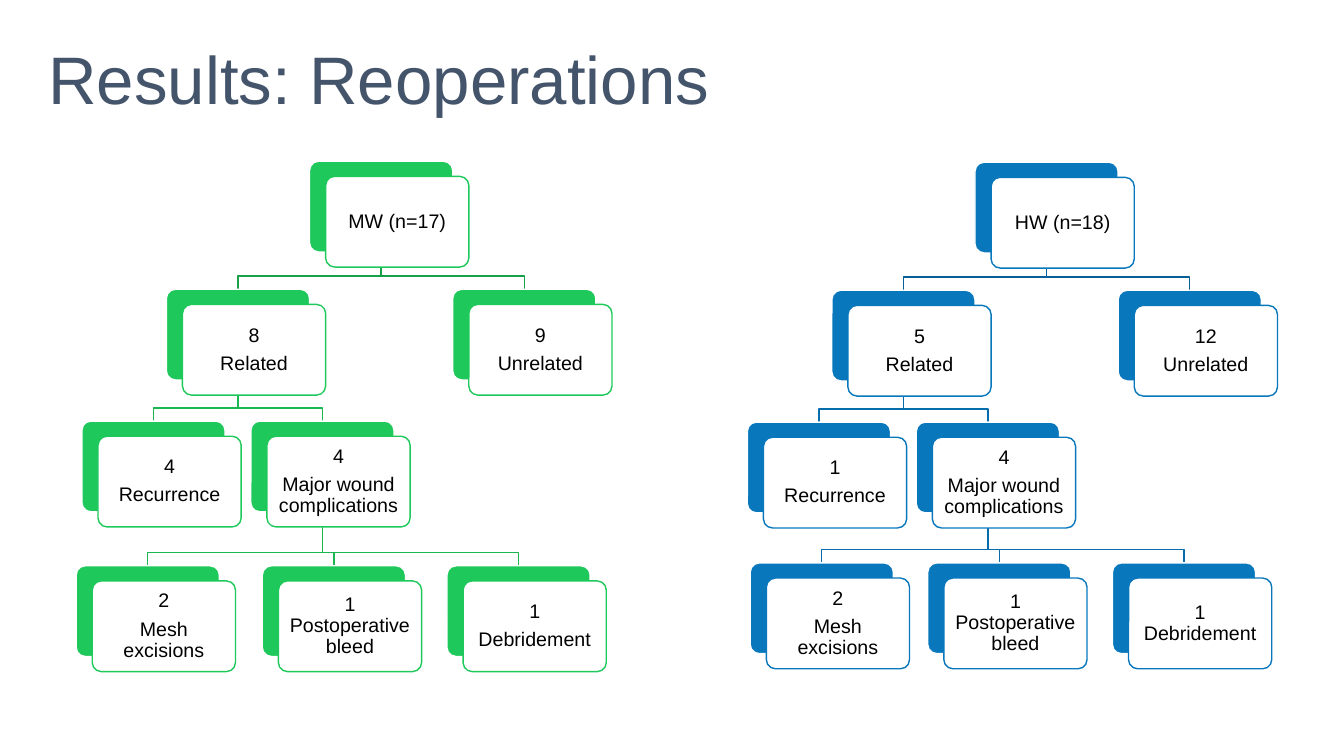
"""Builds the reoperations slide with one outcome tree per study arm."""
import pptx
import pptx.dml.color
import pptx.enum.shapes
import pptx.enum.text
import pptx.util

COLORS = {
    "background": "FFFFFF", "text": "000000", "title": "44546A",
    "green": "1EC85A", "green_upper": "18A048", "green_lower": "1BB652",
    "blue": "0877BC", "blue_upper": "065F97", "blue_lower": "076CAB",
}
FONT = "Arial"
COLUMN, ROW = 1.42, 1.27
CARD_WIDTH, CARD_HEIGHT = COLUMN, 0.9
FRONT_SHIFT = (0.16, 0.15)
BEND_GAP = 0.13

UPPER_CELLS = [(1, 0), (0, 1), (2, 1), (-0.59, 2.03), (0.59, 2.03)]
PARENTS = [None, 0, 0, 1, 1, 4, 4, 4]
TREES = [
    {
        "color": "blue", "origin": (8.25, 1.61),
        "last_columns": (-0.57, 0.67, 1.96), "last_row": 3.13,
        "texts": ["HW (n=18)", "5\nRelated", "12\nUnrelated", "1\nRecurrence",
                  "4\nMajor wound complications", "2\nMesh excisions",
                  "1 Postoperative bleed", "1 Debridement"],
    },
    {
        "color": "green", "origin": (1.65, 1.6),
        "last_columns": (-0.63, 0.67, 1.96), "last_row": 3.16,
        "texts": ["MW (n=17)", "8\nRelated", "9\nUnrelated", "4\nRecurrence",
                  "4\nMajor wound complications", "2\nMesh excisions",
                  "1 Postoperative bleed", "1\nDebridement"],
    },
]


def rgb(name):
    """Return the named colour."""
    return pptx.dml.color.RGBColor.from_string(COLORS[name])


def add_run(paragraph, text, size, color):
    """Add one formatted run to a paragraph."""
    run = paragraph.add_run()
    run.text = text
    run.font.name = FONT
    run.font.size = pptx.util.Pt(size)
    run.font.color.rgb = rgb(color)
    paragraph.line_spacing = 0.9


def add_title(slide, text):
    """Add the slide title."""
    box = slide.shapes.add_textbox(*map(pptx.util.Inches, (0.38, 0.1, 12.95, 1.45)))
    frame = box.text_frame
    frame.word_wrap = True
    frame.vertical_anchor = pptx.enum.text.MSO_ANCHOR.MIDDLE
    add_run(frame.paragraphs[0], text, 48, "title")


def set_line(shape, color):
    """Give a shape a plain one-point line and no shadow."""
    shape.shadow.inherit = False
    shape.line.color.rgb = rgb(color)
    shape.line.width = pptx.util.Pt(1)


def add_branch(slide, parent, child, color):
    """Draw a bent line from a parent card to a child card."""
    start_x, end_x = (left + CARD_WIDTH / 2 for left, _ in (parent, child))
    bend_y = child[1] - BEND_GAP
    corners = [(start_x, parent[1] + CARD_HEIGHT), (start_x, bend_y),
               (end_x, bend_y), (end_x, child[1])]
    points = [tuple(map(pptx.util.Inches, corner)) for corner in corners]
    builder = slide.shapes.build_freeform(*points[0])
    builder.add_line_segments(points[1:], close=False)
    shape = builder.convert_to_shape()
    shape.fill.background()
    set_line(shape, color)


def add_plate(slide, position, fill, line):
    """Add one rounded rectangle of card size."""
    shape = slide.shapes.add_shape(
        pptx.enum.shapes.MSO_SHAPE.ROUNDED_RECTANGLE,
        *map(pptx.util.Inches, (*position, CARD_WIDTH, CARD_HEIGHT)))
    shape.adjustments[0] = 0.1
    shape.fill.solid()
    shape.fill.fore_color.rgb = rgb(fill)
    set_line(shape, line)
    return shape


def add_card(slide, position, text, color):
    """Add a coloured back plate with a white text plate in front."""
    add_plate(slide, position, color, "background")
    front = [place + shift for place, shift in zip(position, FRONT_SHIFT)]
    frame = add_plate(slide, front, "background", color).text_frame
    frame.word_wrap = True
    frame.vertical_anchor = pptx.enum.text.MSO_ANCHOR.MIDDLE
    frame.margin_left = frame.margin_right = pptx.util.Inches(0.06)
    frame.margin_top = frame.margin_bottom = pptx.util.Inches(0.06)
    for index, line in enumerate(text.split("\n")):
        paragraph = frame.add_paragraph() if index else frame.paragraphs[0]
        paragraph.alignment = pptx.enum.text.PP_ALIGN.CENTER
        paragraph.space_after = pptx.util.Pt(4.9)
        add_run(paragraph, line, 14, "text")


def add_tree(slide, tree):
    """Add the branches and cards of one study arm."""
    left, top = tree["origin"]
    cells = UPPER_CELLS + [(column, tree["last_row"]) for column in tree["last_columns"]]
    positions = [(left + column * COLUMN, top + row * ROW) for column, row in cells]
    for position, parent in zip(positions, PARENTS):
        if parent is not None:
            level = "lower" if parent else "upper"
            add_branch(slide, positions[parent], position, f"{tree['color']}_{level}")
    for position, text in zip(positions, tree["texts"]):
        add_card(slide, position, text, tree["color"])


def main():
    """Build and save the presentation."""
    presentation = pptx.Presentation()
    presentation.slide_width = pptx.util.Inches(13.33)
    presentation.slide_height = pptx.util.Inches(7.5)
    slide = presentation.slides.add_slide(presentation.slide_layouts[6])
    for tree in TREES:
        add_tree(slide, tree)
    add_title(slide, "Results: Reoperations")
    presentation.save("out.pptx")


if __name__ == "__main__":
    main()
